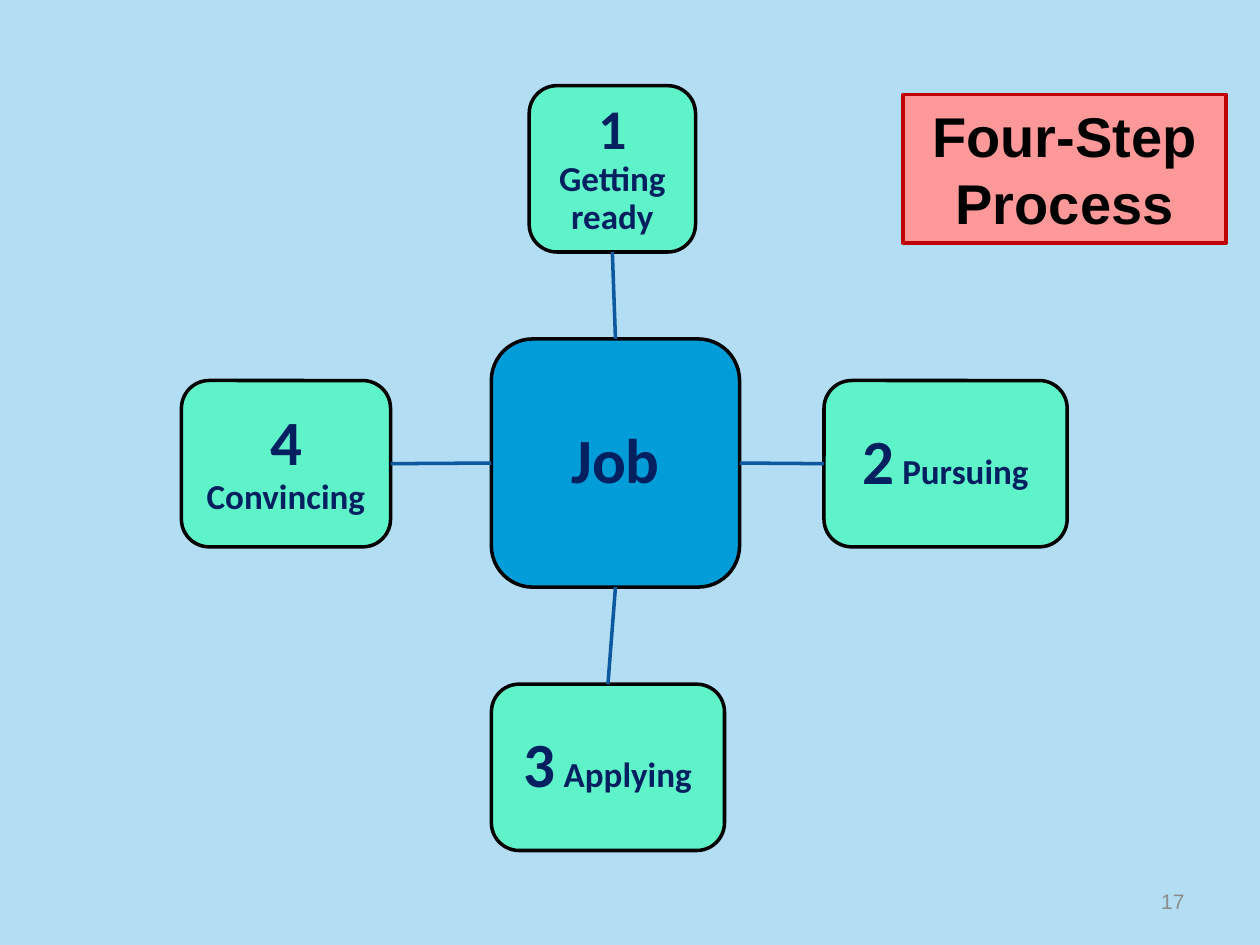
from lxml.etree import SubElement
from pptx import Presentation
from pptx.dml.color import RGBColor
from pptx.enum.shapes import MSO_CONNECTOR, MSO_SHAPE
from pptx.enum.text import MSO_ANCHOR, PP_ALIGN
from pptx.oxml.ns import qn
from pptx.util import Inches, Pt

TOP, LEFT, BOTTOM, RIGHT = range(4)


def color(hex_code):
    return RGBColor.from_string(hex_code)


class ProcessSlide:
    navy, black, blue, mint = "002060", "000000", "009DD9", "5FF3CA"
    link_color = "0C599F"

    def __init__(self, slide, background):
        self.slide = slide
        slide.background.fill.solid()
        slide.background.fill.fore_color.rgb = color(background)

    def set_text(self, frame, runs, font_name, font_color, align, bold=True):
        """Fill the first paragraph with (text, size) runs."""
        frame.word_wrap = True
        frame.vertical_anchor = MSO_ANCHOR.MIDDLE
        paragraph = frame.paragraphs[0]
        paragraph.alignment = align
        paragraph.font.name = font_name
        paragraph.font.bold = bold
        paragraph.font.color.rgb = color(font_color)
        for text, size in runs:
            run = paragraph.add_run()
            run.text = text
            run.font.size = Pt(size)
        return paragraph

    def box(self, kind, bounds, fill, line, line_width):
        shape = self.slide.shapes.add_shape(kind, *map(Inches, bounds))
        shape.shadow.inherit = False
        shape.fill.solid()
        shape.fill.fore_color.rgb = color(fill)
        shape.line.color.rgb = color(line)
        shape.line.width = Pt(line_width)
        return shape

    def node(self, bounds, runs, fill, inset=0.1):
        shape = self.box(MSO_SHAPE.ROUNDED_RECTANGLE, bounds, fill, self.black, 2)
        frame = shape.text_frame
        frame.margin_left = frame.margin_right = Inches(inset)
        frame.margin_top = frame.margin_bottom = Inches(inset)
        paragraph = self.set_text(frame, runs, "Calibri", self.navy, PP_ALIGN.CENTER)
        paragraph.line_spacing = 0.9
        return shape

    def link(self, start, start_side, end, end_side):
        line = self.slide.shapes.add_connector(MSO_CONNECTOR.STRAIGHT, 0, 0, 0, 0)
        line.begin_connect(start, start_side)
        line.end_connect(end, end_side)
        line.line.color.rgb = color(self.link_color)
        line.line.width = Pt(2)
        SubElement(line._element.spPr, qn("a:effectLst"))

    def title(self, bounds, text):
        shape = self.box(MSO_SHAPE.RECTANGLE, bounds, "FF9999", "C00000", 2.25)
        self.set_text(shape.text_frame, [(text, 32)], "Arial", self.black, PP_ALIGN.CENTER)

    def page_number(self, bounds, text):
        label = self.slide.shapes.add_textbox(*map(Inches, bounds))
        self.set_text(label.text_frame, [(text, 12)], "Arial", "8C8C8C", PP_ALIGN.RIGHT, False)


def main():
    presentation = Presentation()
    presentation.slide_width, presentation.slide_height = Inches(10), Inches(7.5)
    page = ProcessSlide(presentation.slides.add_slide(presentation.slide_layouts[6]), "B3DDF2")
    page.page_number((7.17, 6.95, 2.33, 0.4), "17")

    # Hub
    job = page.node((3.9, 2.69, 1.97, 1.97), [("Job", 36)], page.blue)

    # Steps around the hub: left, top, width, number size, inset, hub side
    step_height = 1.32
    steps = [
        ("1", "Getting ready", 4.2, 0.68, 1.32, 32, 0.09, TOP),
        ("2", "Pursuing", 6.54, 3.02, 1.93, 36, 0.1, RIGHT),
        ("3", "Applying", 3.9, 5.43, 1.85, 36, 0.1, BOTTOM),
        ("4", "Convincing", 1.44, 3.02, 1.66, 36, 0.1, LEFT),
    ]
    for number, name, left, top, width, size, inset, side in steps:
        runs = [(number, size), (f" {name}", 20)]
        step = page.node((left, top, width, step_height), runs, page.mint, inset)
        page.link(job, side, step, (side + 2) % 4)

    # Title
    page.title((7.17, 0.75, 2.56, 1.18), "Four-Step Process")

    presentation.save("out.pptx")


if __name__ == "__main__":
    main()
